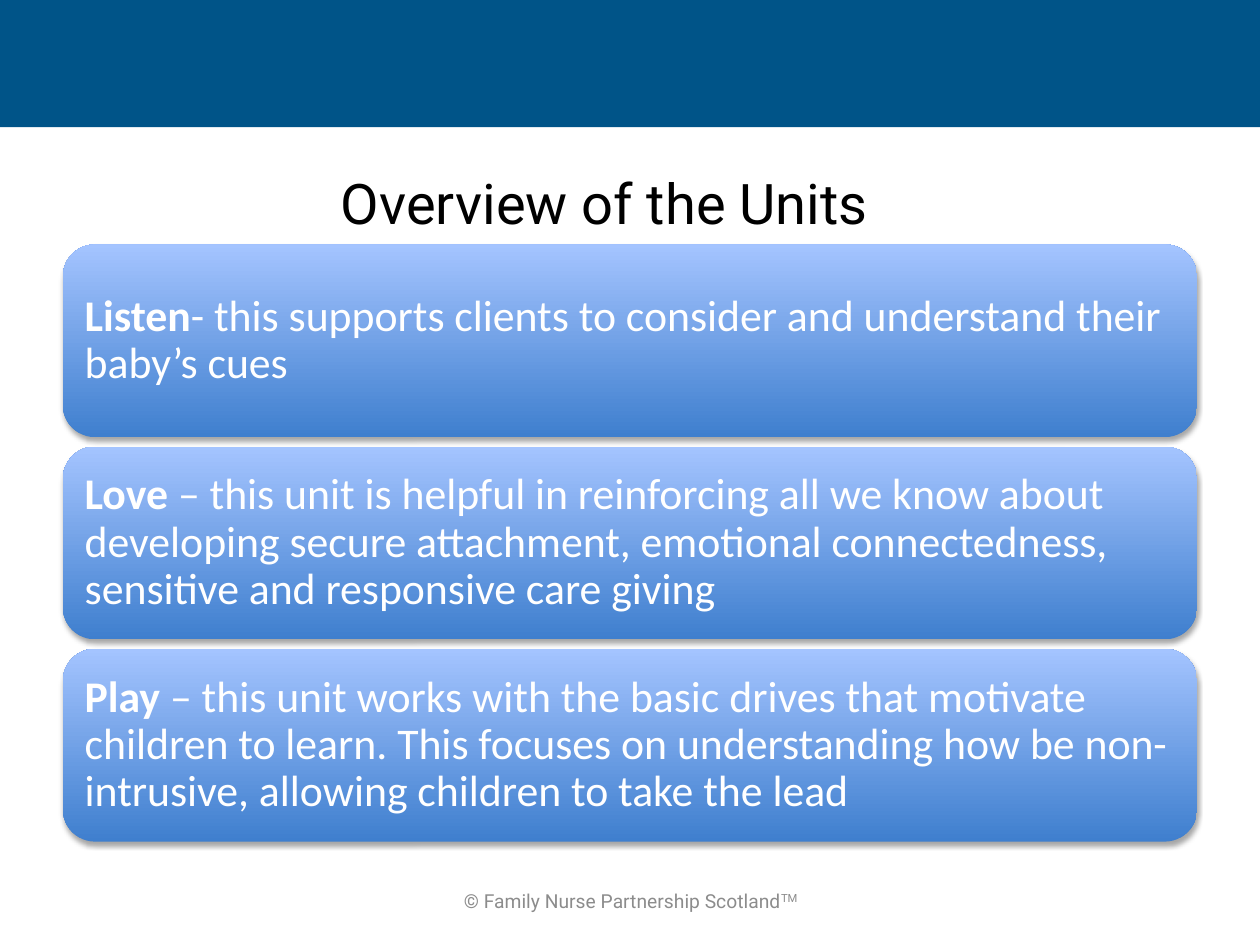
from dataclasses import dataclass

from lxml import etree
from pptx import Presentation
from pptx.dml.color import RGBColor
from pptx.enum.shapes import MSO_SHAPE
from pptx.enum.text import MSO_ANCHOR, PP_ALIGN
from pptx.oxml import parse_xml
from pptx.oxml.ns import nsdecls, qn
from pptx.shapes.autoshape import Shape
from pptx.slide import Slide
from pptx.util import Inches, Pt

RECTANGLE = MSO_SHAPE.RECTANGLE
ROUNDED = MSO_SHAPE.ROUNDED_RECTANGLE
MIDDLE, BOTTOM = MSO_ANCHOR.MIDDLE, MSO_ANCHOR.BOTTOM
LEFT, CENTER = PP_ALIGN.LEFT, PP_ALIGN.CENTER

BANNER_BLUE = "005488"
CARD_DARK, CARD_LIGHT = "3F7FCE", "A4C4FF"
WHITE, BLACK, GREY = "FFFFFF", "000000", "8C8C8C"

CARD_TOP, CARD_HEIGHT, CARD_PITCH = 1.94, 1.53, 1.605


@dataclass
class Unit:
    name: str
    description: str


@dataclass
class Style:
    size: float
    font: str
    color: str


TITLE_STYLE = Style(32, "Roboto", BLACK)
CARD_STYLE = Style(25, "Calibri", WHITE)
FOOTER_STYLE = Style(11, "Roboto", GREY)

UNITS = [
    Unit("Listen", "- this supports clients to consider and understand their baby’s cues"),
    Unit("Love", " – this unit is helpful in reinforcing all we know about developing secure "
                 "attachment, emotional connectedness, sensitive and responsive care giving"),
    Unit("Play", " – this unit works with the basic drives that motivate children to learn. "
                 "This focuses on understanding how be non-intrusive, allowing children to "
                 "take the lead"),
]


def rgb(value: str) -> RGBColor:
    return RGBColor.from_string(value)


def write(shape: Shape, parts: list[str], style: Style, anchor: MSO_ANCHOR,
          align: PP_ALIGN) -> None:
    frame = shape.text_frame
    frame.word_wrap = True
    frame.vertical_anchor = anchor
    paragraph = frame.paragraphs[0]
    paragraph.alignment = align
    for part in parts:
        run = paragraph.add_run()
        run.text = part
        run.font.size = Pt(style.size)
        run.font.name = style.font
        run.font.color.rgb = rgb(style.color)


def add_label(slide: Slide, left: float, top: float, width: float, height: float,
              parts: list[str], style: Style, anchor: MSO_ANCHOR) -> Shape:
    label = slide.shapes.add_textbox(Inches(left), Inches(top), Inches(width), Inches(height))
    write(label, parts, style, anchor, CENTER)
    return label


def add_shadow(shape: Shape) -> None:
    shape.shadow.inherit = False
    effects = shape._element.spPr.find(qn("a:effectLst"))
    shadow = parse_xml(
        f'<a:outerShdw {nsdecls("a")} blurRad="{Pt(3.1)}" dist="{Pt(1.8)}" '
        'dir="5400000" rotWithShape="0"/>')
    color = etree.SubElement(shadow, qn("a:srgbClr"), val=BLACK)
    etree.SubElement(color, qn("a:alpha"), val="35000")
    effects.append(shadow)


def add_card(slide: Slide, unit: Unit, top: float) -> None:
    card = slide.shapes.add_shape(ROUNDED, Inches(0.5), Inches(top), Inches(9),
                                  Inches(CARD_HEIGHT))
    card.line.fill.background()
    card.fill.gradient()
    card.fill.gradient_angle = 90
    for stop, color in zip(card.fill.gradient_stops, (CARD_DARK, CARD_LIGHT)):
        stop.color.rgb = rgb(color)
    add_shadow(card)
    write(card, [unit.name, unit.description], CARD_STYLE, MIDDLE, LEFT)
    frame = card.text_frame
    frame.margin_left = frame.margin_right = Inches(0.1)
    frame.margin_top = frame.margin_bottom = Inches(0.1)
    paragraph = frame.paragraphs[0]
    paragraph.line_spacing = 0.9
    paragraph.runs[0].font.bold = True


def main() -> None:
    deck = Presentation()
    deck.slide_width, deck.slide_height = Inches(10), Inches(7.5)
    slide = deck.slides.add_slide(deck.slide_layouts[6])

    banner = slide.shapes.add_shape(RECTANGLE, 0, 0, deck.slide_width, Inches(1.01))
    banner.shadow.inherit = False
    banner.fill.solid()
    banner.fill.fore_color.rgb = rgb(BANNER_BLUE)
    banner.line.fill.background()

    add_label(slide, 0.3, 0.67, 9, 1.25, ["Overview of the Units"], TITLE_STYLE, BOTTOM)
    for index, unit in enumerate(UNITS):
        add_card(slide, unit, CARD_TOP + index * CARD_PITCH)

    footer = add_label(slide, 3.42, 6.95, 3.17, 0.4,
                       ["© Family Nurse Partnership Scotland", "TM"], FOOTER_STYLE, MIDDLE)
    notice = footer.text_frame.paragraphs[0]
    notice.space_after = Pt(6)
    notice.runs[1].font._element.set("baseline", "30000")

    deck.save("out.pptx")


if __name__ == "__main__":
    main()
